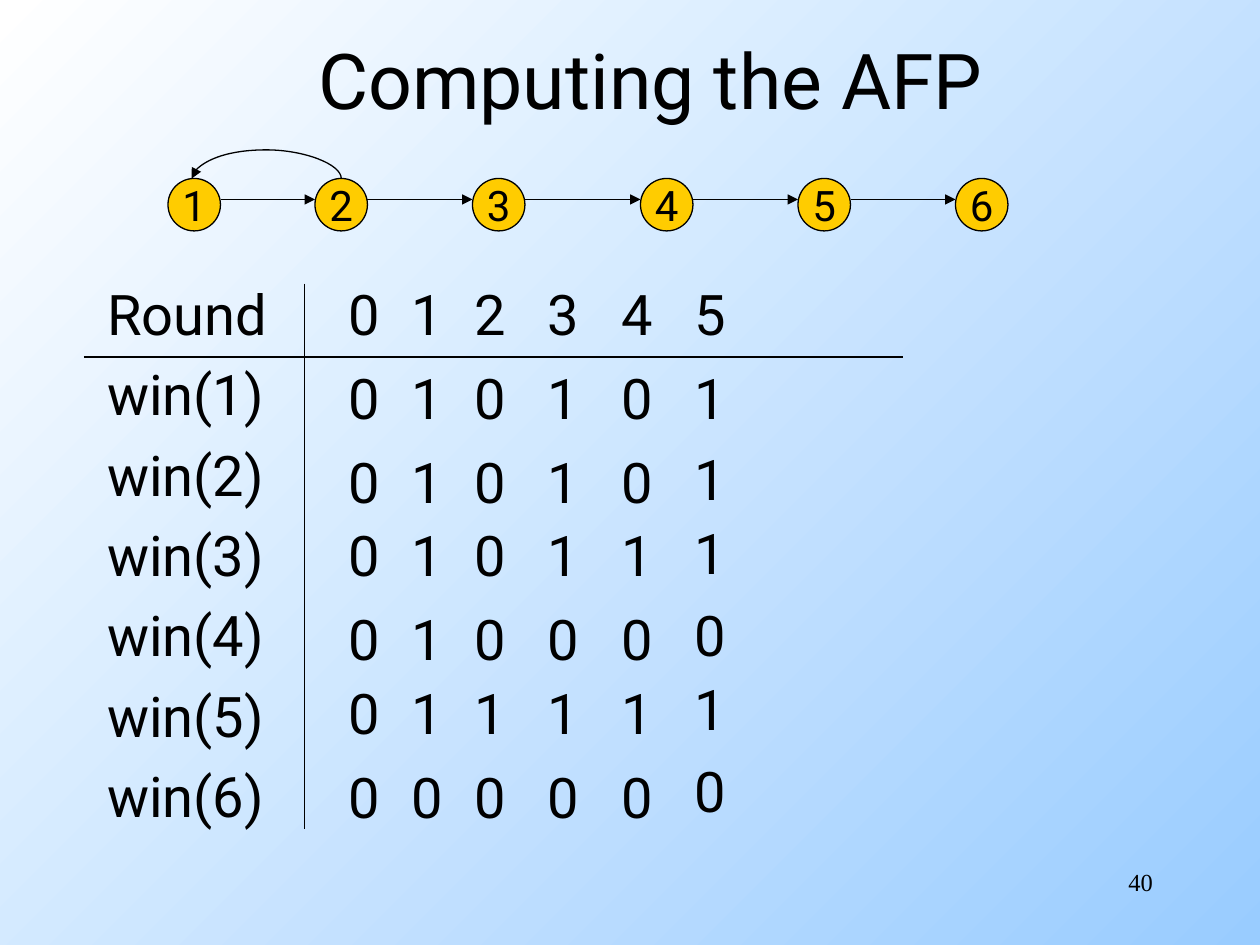
"""Build the slide that computes the AFP round by round over a chain of six nodes."""
from dataclasses import dataclass
from itertools import pairwise

from lxml.etree import SubElement
from pptx import Presentation
from pptx.dml.color import RGBColor
from pptx.enum.shapes import MSO_CONNECTOR, MSO_SHAPE
from pptx.enum.text import MSO_ANCHOR, MSO_AUTO_SIZE, PP_ALIGN
from pptx.oxml.ns import qn
from pptx.util import Emu, Pt

EMU_PER_PX = 9525
COLORS = {"ink": "000000", "node": "FFCC00", "light": "FFFFFF", "sky": "99CCFF"}
FONT = "Roboto"
NODE_TOP, NODE_SIZE, ARROW_TOP = 136, 40, 152
NODE_LEFTS = (128, 240, 360, 488, 608, 728)
ROW_LABELS = ("Round", *(f"win({node})" for node in range(1, 7)))
ROW_TOPS = (208, 272, 336, 392, 456, 512, 576)
LAST_ROW_TOPS = (208, 272, 334, 390, 453, 509, 572)


@dataclass(frozen=True)
class Round:
    left: int
    values: str
    tops: tuple = ROW_TOPS


@dataclass(frozen=True)
class Line:
    start: tuple
    end: tuple
    arrow: bool = False


ROUNDS = (
    Round(256, "0000000"),
    Round(304, "1111110"),
    Round(352, "2000010"),
    Round(408, "3111010"),
    Round(464, "4001010"),
    Round(520, "5111010", LAST_ROW_TOPS),
)
RULES = (Line((64, 272), (688, 272)), Line((232, 216), (232, 632)))


def px(length: int) -> Emu:
    return Emu(length * EMU_PER_PX)


def color(name: str) -> RGBColor:
    return RGBColor.from_string(COLORS[name])


def place(shape, left: int, top: int, width: int, height: int) -> None:
    shape.left, shape.top, shape.width, shape.height = map(px, (left, top, width, height))


def write(box, *texts: str, size: int, font: str = FONT, align=PP_ALIGN.LEFT,
          anchor=MSO_ANCHOR.TOP, wrap: bool = True, fit=MSO_AUTO_SIZE.NONE,
          hanging: int = 0, space_before: float = 0) -> None:
    frame = box.text_frame
    frame.text = "\n".join(texts)
    frame.auto_size, frame.word_wrap, frame.vertical_anchor = fit, wrap, anchor
    for para in frame.paragraphs:
        para.alignment = align
        para.space_before = Pt(space_before)
        if hanging:
            properties = para._p.get_or_add_pPr()
            properties.set("marL", str(px(hanging)))
            properties.set("indent", str(px(-hanging)))
            SubElement(properties, qn("a:buNone"))
        for span in para.runs:
            span.font.size, span.font.name = Pt(size), font
            span.font.color.rgb = color("ink")


def draw_line(page, line: Line, kind=MSO_CONNECTOR.STRAIGHT):
    connector = page.shapes.add_connector(kind, *map(px, line.start + line.end))
    connector.line.color.rgb = color("ink")
    connector.line.width = Pt(0.75)
    if line.arrow:
        SubElement(connector.line._get_or_add_ln(), qn("a:tailEnd"), type="triangle")
    SubElement(connector._element.spPr, qn("a:effectLst"))
    return connector


def draw_back_arrow(page) -> None:
    connector = draw_line(page, Line((203, 79), (203, 193), arrow=True), MSO_CONNECTOR.CURVE)
    thickness = 1588
    connector.width = Emu(thickness)
    properties = connector._element.spPr
    for name, value in (("rot", "16200000"), ("flipH", "1"), ("flipV", "1")):
        properties.find(qn("a:xfrm")).set(name, value)
    guides = properties.find(qn("a:prstGeom")).find(qn("a:avLst"))
    bulge = round(-px(24) / thickness * 100000)
    SubElement(guides, qn("a:gd"), name="adj1", fmla=f"val {bulge}")


def draw_node(page, left: int, label: str) -> None:
    node = page.shapes.add_shape(
        MSO_SHAPE.OVAL, *map(px, (left, NODE_TOP, NODE_SIZE, NODE_SIZE)))
    node.shadow.inherit = False
    node.fill.solid()
    node.fill.fore_color.rgb = color("node")
    node.line.color.rgb = color("ink")
    node.line.width = Pt(0.75)
    write(node, label, size=24, align=PP_ALIGN.CENTER, anchor=MSO_ANCHOR.MIDDLE, wrap=False)


def draw_round(page, column: Round) -> None:
    for top, value in zip(column.tops, column.values):
        box = page.shapes.add_textbox(*map(px, (column.left, top, 42, 60)))
        write(box, value, size=32, wrap=False, fit=MSO_AUTO_SIZE.SHAPE_TO_FIT_TEXT)


def paint_background(page) -> None:
    fill = page.background.fill
    fill.gradient()
    fill.gradient_angle = 315
    for stop, name in zip(fill.gradient_stops, ("light", "sky")):
        stop.color.rgb = color(name)


def main() -> None:
    deck = Presentation()
    deck.slide_width, deck.slide_height = px(960), px(720)
    page = deck.slides.add_slide(deck.slide_layouts[1])
    paint_background(page)

    title, body = page.placeholders
    place(title, 88, 0, 816, 120)
    write(title, "Computing the AFP", size=44, align=PP_ALIGN.CENTER, anchor=MSO_ANCHOR.MIDDLE)
    place(body, 72, 208, 816, 432)
    write(body, *ROW_LABELS, size=32, hanging=36, space_before=7.5)
    number = page.shapes.add_textbox(*map(px, (688, 656, 200, 48)))
    write(number, "40", size=14, font="Times New Roman", align=PP_ALIGN.RIGHT)

    for label, left in enumerate(NODE_LEFTS, start=1):
        draw_node(page, left, str(label))
    for left, following in pairwise(NODE_LEFTS):
        draw_line(page, Line((left + NODE_SIZE, ARROW_TOP), (following, ARROW_TOP), arrow=True))
    draw_back_arrow(page)

    for rule in RULES:
        draw_line(page, rule)
    for column in ROUNDS:
        draw_round(page, column)
    deck.save("out.pptx")


if __name__ == "__main__":
    main()
